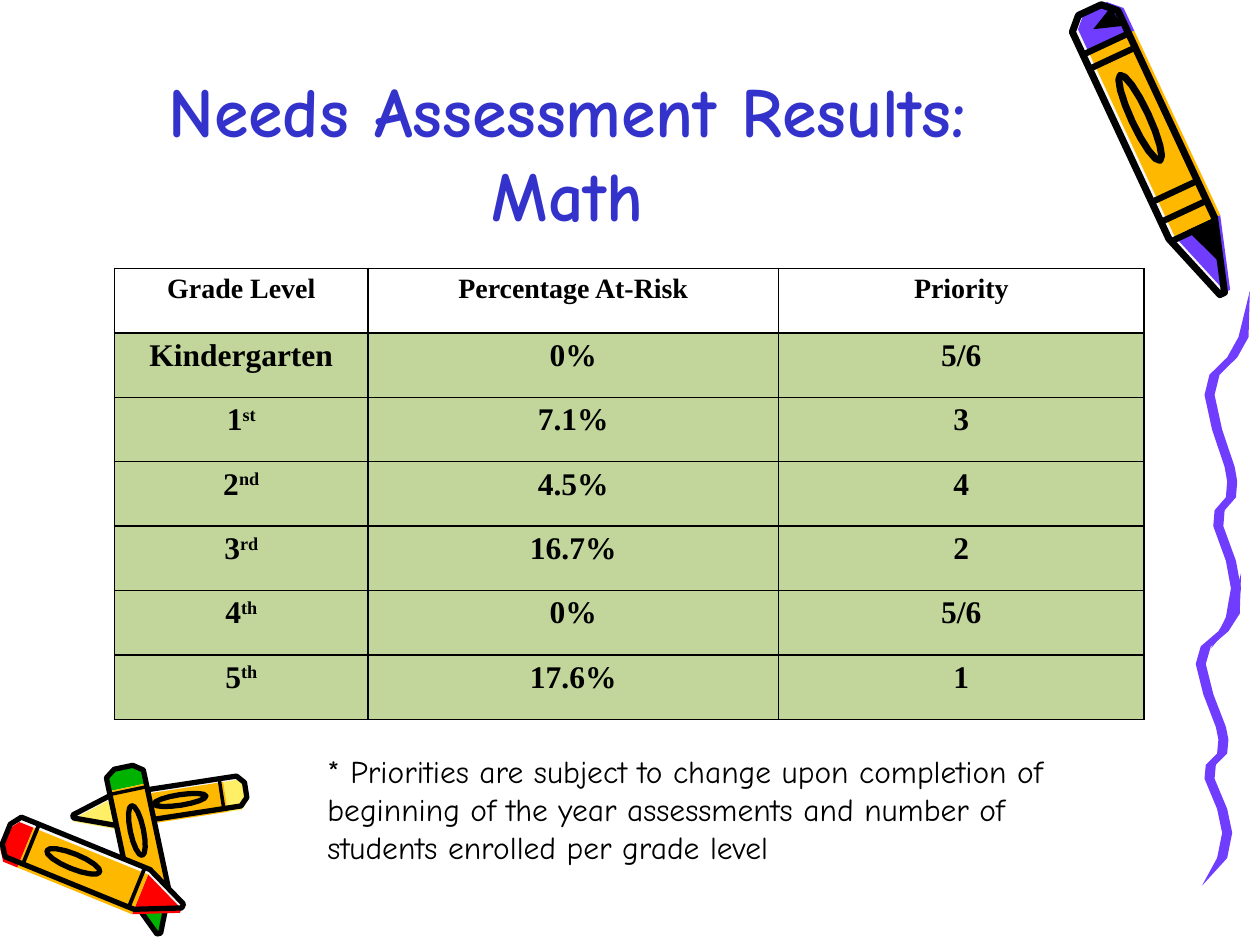
import dataclasses
import math

import lxml.etree
import pptx
import pptx.dml.color
import pptx.enum.text
import pptx.oxml.ns
import pptx.util

EMU_PER_PX = 9144  # 100 px to the inch


@dataclasses.dataclass(frozen=True)
class Theme:
    title_font: str = "Comic Neue"
    table_font: str = "Times New Roman"
    title_size: int = 40
    body_size: int = 18
    header_size: int = 16
    black: str = "000000"
    title_blue: str = "3333CC"
    cell_green: str = "C2D69B"
    purple: str = "703DFF"
    orange: str = "FFB800"
    red: str = "FF0000"
    green: str = "00B200"
    yellow: str = "FFEF66"
    paper: str = "F8F8F8"


@dataclasses.dataclass(frozen=True)
class Box:
    left: int
    top: int
    width: int
    height: int

    def emu(self):
        return [px(n) for n in (self.left, self.top, self.width, self.height)]


@dataclasses.dataclass(frozen=True)
class Crayon:
    """A crayon from cap to tip, in px from the corner of its region."""
    cap: tuple
    tip: tuple
    half_width: int
    color: str
    ink: float  # width of the black outline, in points
    shift: float  # how far the colours slip sideways, in half widths
    bands: tuple = (0.14, 0.74)  # black rings, as fractions of the length
    shaded: bool = False


THEME = Theme()
CENTER = pptx.enum.text.PP_ALIGN.CENTER

ROWS = [
    ("Grade Level", "Percentage At-Risk", "Priority"),
    ("Kindergarten", "0%", "5/6"),
    ("1^st", "7.1%", "3"),
    ("2^nd", "4.5%", "4"),
    ("3^rd", "16.7%", "2"),
    ("4^th", "0%", "5/6"),
    ("5^th", "17.6%", "1"),
]
COLUMN_WIDTHS = (201, 326, 290)

# Where every crayon changes, as fractions of its length.
CAP_END, SHOULDER = 0.12, 0.77
OVAL_CENTER, OVAL_RADIUS = 0.38, 0.15

PENCIL = Crayon((25, 8), (130, 233), 20, THEME.purple, 4, 0.25,
                bands=(0.12, 0.17, 0.64, 0.71, 0.78), shaded=True)
CRAYON_PILE = [
    Crayon((195, 27), (58, 48), 12, THEME.yellow, 3, 0.25),
    Crayon((98, 9), (126, 141), 15, THEME.green, 3, -0.1),
    Crayon((5, 62), (145, 119), 17, THEME.red, 3, -0.25),
]

# Height and middle of the ribbon at each bend, in a 36 by 248 px design.
RIBBON_SIZE, RIBBON_WIDTH = (36, 248), 8
RIBBON_BENDS = [(0, 36), (32, 31), (46, 22), (58, 8), (72, 4), (96, 10), (122, 20),
                (132, 22), (143, 21), (152, 12), (163, 11), (187, 21), (206, 25),
                (226, 21), (248, 5)]


def px(length):
    return pptx.util.Emu(round(length * EMU_PER_PX))


def rgb(color):
    return pptx.dml.color.RGBColor.from_string(color)


def write_text(frame, text, *, font, size, color=THEME.black, bold=False,
               align=None, anchor=pptx.enum.text.MSO_ANCHOR.TOP, spacing=None):
    """Fill a text frame; what follows a ^ is superscript."""
    frame.word_wrap = True
    frame.vertical_anchor = anchor
    paragraph = frame.paragraphs[0]
    paragraph.alignment = align
    paragraph.line_spacing = spacing
    for position, part in enumerate(text.split("^")):
        run = paragraph.add_run()
        run.text = part
        run.font.name = font
        run.font.size = pptx.util.Pt(size)
        run.font.bold = bold
        run.font.color.rgb = rgb(color)
        if position:
            run._r.get_or_add_rPr().set("baseline", "30000")


def add_text(slide, box, text, **text_format):
    shape = slide.shapes.add_textbox(*box.emu())
    write_text(shape.text_frame, text, **text_format)


def add_polygon(slide, box, points, fill=None, ink=None):
    """Draw a closed outline whose points are px from the corner of the box."""
    corners = [(px(box.left + x), px(box.top + y)) for x, y in points]
    builder = slide.shapes.build_freeform(*corners[0])
    builder.add_line_segments(corners[1:], close=True)
    shape = builder.convert_to_shape()
    shape.shadow.inherit = False
    if fill:
        shape.fill.solid()
        shape.fill.fore_color.rgb = rgb(fill)
    else:
        shape.fill.background()
    if ink:
        shape.line.color.rgb = rgb(THEME.black)
        shape.line.width = pptx.util.Pt(ink)
    else:
        shape.line.fill.background()


def add_crayon(slide, box, crayon):
    """Draw colours first, then black line work, along the axis of the crayon."""
    run_x, run_y = (end - start for start, end in zip(crayon.cap, crayon.tip))
    length = math.hypot(run_x, run_y)

    def draw(part, shift=0, **style):
        """Draw (along, across) points: fractions of length and of half width."""
        points = []
        for along, across in part:
            side = (across + shift) * crayon.half_width / length
            points.append((crayon.cap[0] + along * run_x + side * run_y,
                           crayon.cap[1] + along * run_y - side * run_x))
        add_polygon(slide, box, points, **style)

    def ring(start, end):
        return [(start, -1), (start, 1), (end, 1), (end, -1)]

    cap = [(CAP_END, -1), (0.04, -1), (0, -0.5), (0, 0.5), (0.04, 1), (CAP_END, 1)]
    tip = [(SHOULDER, 1), (1, 0.1), (1, -0.1), (SHOULDER, -1)]
    oval = [(OVAL_CENTER + OVAL_RADIUS * math.cos(angle), 0.35 * math.sin(angle))
            for angle in (math.tau * step / 16 for step in range(16))]

    draw(cap + tip, fill=THEME.paper)
    for part, color in ((cap, crayon.color), (tip, crayon.color),
                        (ring(CAP_END, SHOULDER), THEME.orange)):
        draw(part, crayon.shift, fill=color)
    draw(cap + tip, ink=crayon.ink)
    for band in crayon.bands:
        draw(ring(band - 0.01, band + 0.01), fill=THEME.black)
    draw(oval, fill=THEME.orange, ink=crayon.ink)
    if crayon.shaded:
        draw([(0.02, 0.8), (0.09, 0.9), (0.06, -0.2)], fill=THEME.black)
        draw([(SHOULDER, -0.2), (SHOULDER, 1), (0.9, 0.4)], fill=THEME.black)


def add_crayon_pile(slide, box):
    for crayon in CRAYON_PILE:
        add_crayon(slide, box, crayon)


def add_ribbon(slide, box):
    """Draw a ribbon of even width that narrows to a point at both ends."""
    scale_x, scale_y = box.width / RIBBON_SIZE[0], box.height / RIBBON_SIZE[1]
    bends = [(middle * scale_x, height * scale_y) for height, middle in RIBBON_BENDS]
    half = RIBBON_WIDTH * scale_x / 2
    left_edge = [(x - half, y) for x, y in bends[1:-1]]
    right_edge = [(x + half, y) for x, y in bends[1:-1]]
    outline = bends[:1] + right_edge + bends[-1:] + left_edge[::-1]
    add_polygon(slide, box, outline, fill=THEME.purple)


def add_borders(cell):
    properties = cell._tc.get_or_add_tcPr()
    for position, side in enumerate(("lnL", "lnR", "lnT", "lnB")):
        line = lxml.etree.Element(pptx.oxml.ns.qn("a:" + side), w=str(pptx.util.Pt(1)))
        fill = lxml.etree.SubElement(line, pptx.oxml.ns.qn("a:solidFill"))
        lxml.etree.SubElement(fill, pptx.oxml.ns.qn("a:srgbClr"), val=THEME.black)
        properties.insert(position, line)


def add_results_table(slide, box):
    table = slide.shapes.add_table(len(ROWS), len(COLUMN_WIDTHS), *box.emu()).table
    table.first_row = table.horz_banding = False
    for column, width in zip(table.columns, COLUMN_WIDTHS):
        column.width = px(width)
    for row_number, values in enumerate(ROWS):
        table.rows[row_number].height = px(box.height / len(ROWS))
        for column_number, text in enumerate(values):
            cell = table.cell(row_number, column_number)
            cell.margin_left = cell.margin_right = px(7)
            cell.margin_top = cell.margin_bottom = 0
            if row_number:
                cell.fill.solid()
                cell.fill.fore_color.rgb = rgb(THEME.cell_green)
            else:
                cell.fill.background()
            add_borders(cell)
            write_text(cell.text_frame, text, font=THEME.table_font, bold=True,
                       size=THEME.body_size if row_number else THEME.header_size,
                       align=CENTER, spacing=1.15)


def main():
    presentation = pptx.Presentation()
    presentation.slide_width, presentation.slide_height = px(1000), px(750)
    slide = presentation.slides.add_slide(presentation.slide_layouts[6])
    add_crayon_pile(slide, Box(0, 600, 200, 150))
    add_ribbon(slide, Box(949, 455, 36, 248))
    add_ribbon(slide, Box(956, 231, 36, 284))
    add_crayon(slide, Box(840, 0, 150, 240), PENCIL)
    add_text(slide, Box(75, 17, 751, 175), "Needs Assessment Results: Math",
             font=THEME.title_font, size=THEME.title_size, color=THEME.title_blue,
             bold=True, align=CENTER, anchor=pptx.enum.text.MSO_ANCHOR.BOTTOM)
    add_text(slide, Box(250, 592, 592, 101),
             "* Priorities are subject to change upon completion of beginning of "
             "the year assessments and number of students enrolled per grade level",
             font=THEME.title_font, size=THEME.body_size)
    add_results_table(slide, Box(91, 213, 817, 358))
    presentation.save("out.pptx")


if __name__ == "__main__":
    main()
